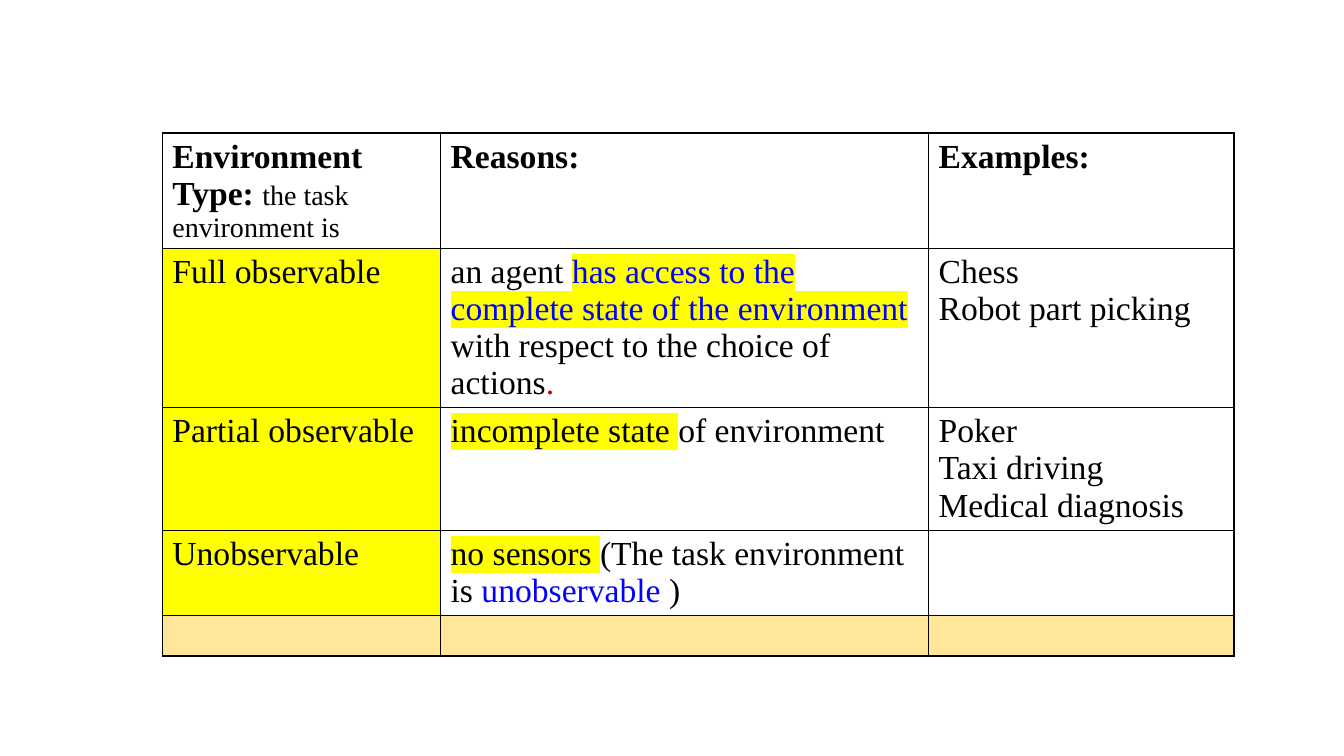
from lxml import etree
from pptx import Presentation
from pptx.dml.color import RGBColor
from pptx.oxml.ns import qn
from pptx.util import Inches, Pt

BLACK = RGBColor(0x00, 0x00, 0x00)
WHITE = RGBColor(0xFF, 0xFF, 0xFF)
YELLOW = RGBColor(0xFF, 0xFF, 0x00)
BLUE = RGBColor(0x00, 0x00, 0xFF)
RED = RGBColor(0xC0, 0x00, 0x00)
SAND = RGBColor(0xFF, 0xE6, 0x99)
FONT = "Times New Roman"

PLAIN = {}
BOLD = {"bold": True}
SMALL = {"size": 20}
MARK = {"mark": YELLOW}
LINK = {"color": BLUE}

# A cell is a list of paragraphs, a paragraph a list of (text, style) runs.
ROWS = [
    [[[("Environment Type: ", BOLD), ("the task environment is", SMALL)]],
     [[("Reasons:", BOLD)]],
     [[("Examples:", BOLD)]]],
    [[[("Full observable", PLAIN)]],
     [[("an agent ", PLAIN),
       ("has access to the complete state of the environment", LINK | MARK),
       (" with respect to the choice of actions", PLAIN),
       (".", {"color": RED})]],
     [[("Chess", PLAIN)], [("Robot part picking", PLAIN)]]],
    [[[("Partial observable", PLAIN)]],
     [[("incomplete state ", MARK), ("of environment", PLAIN)]],
     [[("Poker", PLAIN)], [("Taxi driving", PLAIN)], [("Medical diagnosis", PLAIN)]]],
    [[[("Unobservable", PLAIN)]],
     [[("no sensors ", MARK), ("(The task environment is ", PLAIN),
       ("unobservable ", LINK), (")", PLAIN)]],
     []],
    [[], [], []],
]
FILLS = [[WHITE] * 3] + [[YELLOW, WHITE, WHITE]] * 3 + [[SAND] * 3]
WIDTHS = [2.76, 4.84, 3.03]
HEIGHTS = [1.14, 1.58, 1.22, 0.83, 0.4]
LEFT, TOP = 1.61, 1.32


def add_color(parent, color):
    etree.SubElement(parent, qn("a:srgbClr"), val=str(color))


def add_run(par, text, bold=False, size=24, color=BLACK, mark=None):
    run = par.add_run()
    run.text = text
    font = run.font
    font.name, font.size, font.bold = FONT, Pt(size), bold
    font.color.rgb = color
    if mark is not None:
        light = etree.Element(qn("a:highlight"))
        add_color(light, mark)
        run._r.rPr.find(qn("a:solidFill")).addnext(light)


def add_border(cell):
    props = cell._tc.get_or_add_tcPr()
    for spot, side in enumerate(("lnL", "lnR", "lnT", "lnB")):
        line = etree.Element(qn("a:" + side), w=str(Pt(1)))
        add_color(etree.SubElement(line, qn("a:solidFill")), BLACK)
        props.insert(spot, line)


def fill_cell(cell, pars, color):
    cell.fill.solid()
    cell.fill.fore_color.rgb = color
    add_border(cell)
    frame = cell.text_frame
    for num, runs in enumerate(pars):
        par = frame.add_paragraph() if num else frame.paragraphs[0]
        for text, style in runs:
            add_run(par, text, **style)


deck = Presentation()
deck.slide_width, deck.slide_height = Inches(13.33), Inches(7.5)
slide = deck.slides.add_slide(deck.slide_layouts[6])
table = slide.shapes.add_table(
    len(ROWS), len(WIDTHS), Inches(LEFT), Inches(TOP),
    Inches(sum(WIDTHS)), Inches(sum(HEIGHTS))).table
table.first_row = table.horz_banding = False
for col, width in zip(table.columns, WIDTHS):
    col.width = Inches(width)
for row, height, cells, fills in zip(table.rows, HEIGHTS, ROWS, FILLS):
    row.height = Inches(height)
    for cell, pars, color in zip(row.cells, cells, fills):
        fill_cell(cell, pars, color)

deck.save("out.pptx")
